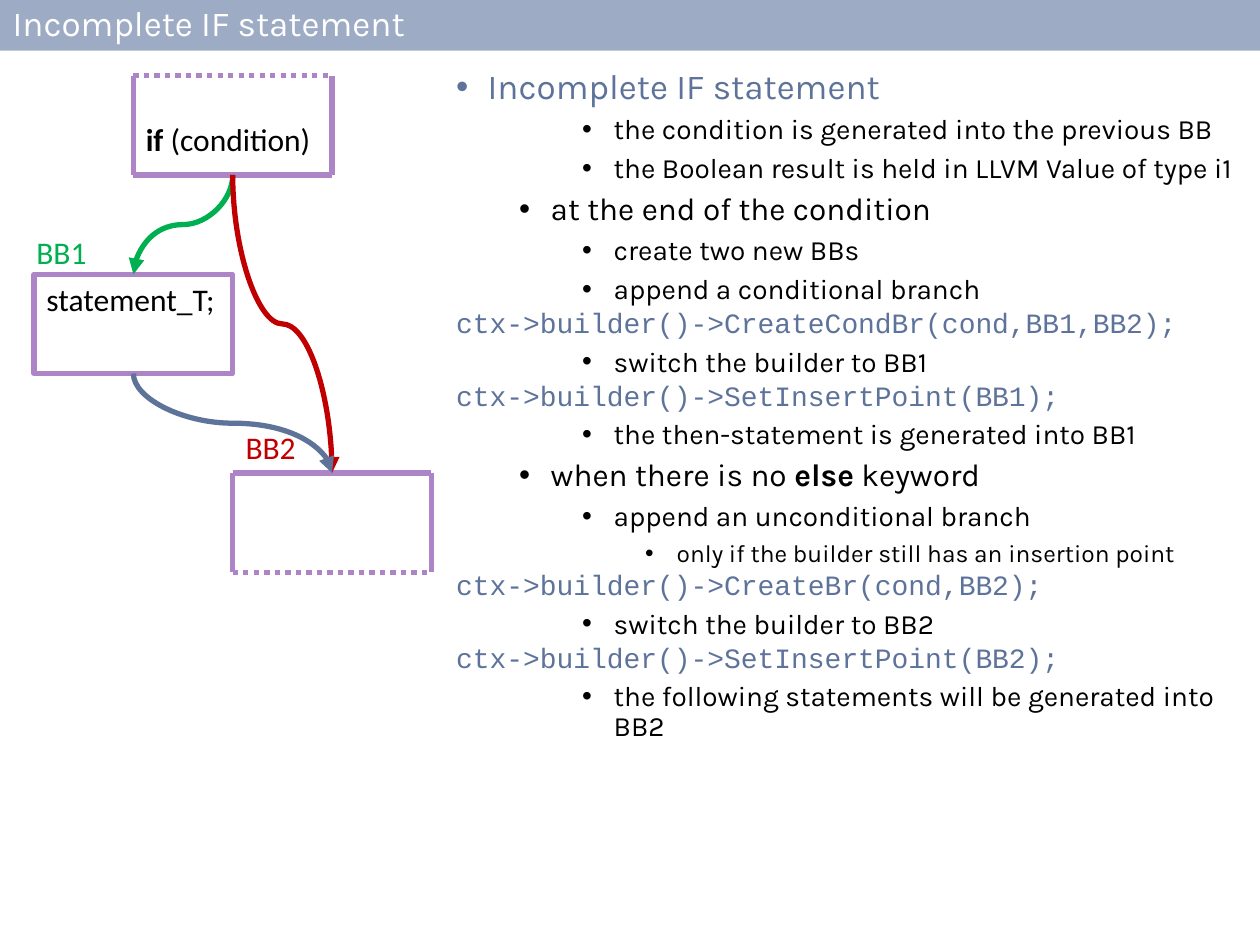
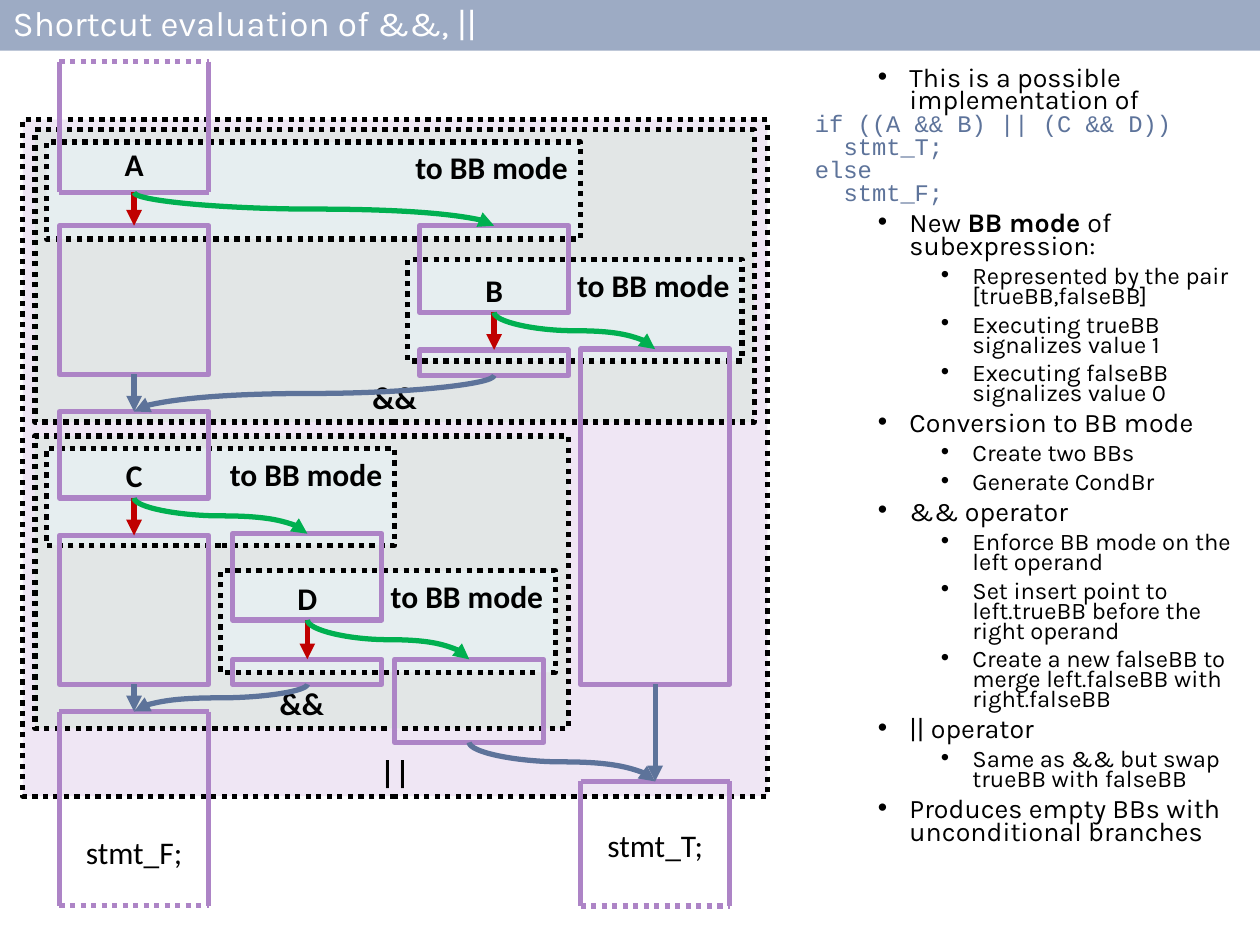
from dataclasses import dataclass

from lxml import etree
from pptx import Presentation
from pptx.dml.color import RGBColor
from pptx.enum.dml import MSO_LINE
from pptx.enum.shapes import MSO_CONNECTOR, MSO_SHAPE
from pptx.enum.text import MSO_ANCHOR, MSO_AUTO_SIZE, PP_ALIGN
from pptx.oxml.ns import qn
from pptx.util import Pt

STRAIGHT, CURVE = MSO_CONNECTOR.STRAIGHT, MSO_CONNECTOR.CURVE
RECTANGLE, DOTTED = MSO_SHAPE.RECTANGLE, MSO_LINE.ROUND_DOT
LEFT, CENTER, RIGHT = PP_ALIGN.LEFT, PP_ALIGN.CENTER, PP_ALIGN.RIGHT
TOP, MIDDLE, BOTTOM = MSO_ANCHOR.TOP, MSO_ANCHOR.MIDDLE, MSO_ANCHOR.BOTTOM
SIDE_TOP, SIDE_BOTTOM = 0, 2
CODE = 4


@dataclass(frozen=True)
class Theme:
    band: str = "9DABC4"
    blue: str = "5D739A"
    purple: str = "AD84C6"
    green: str = "00B050"
    red: str = "C00000"
    black: str = "000000"
    white: str = "FFFFFF"
    or_fill: str = "EFE6F4"
    and_fill: str = "E2E6E6"
    mode_fill: str = "E6EEF0"
    body_font: str = "Karla"
    code_font: str = "Courier New"
    diagram_font: str = "Calibri"
    title_size: float = 20
    diagram_size: float = 18
    diagram_line: float = 22
    level_sizes: tuple = (20, 18, 16, 14, 16)
    stroke: float = 3


THEME = Theme()

# Text: (level, text), with ** around bold words
IF_TITLE = "Incomplete IF statement"
IF_BODY = [
    (0, "Incomplete IF statement"),
    (2, "the condition is generated into the previous BB"),
    (2, "the Boolean result is held in LLVM Value of type i1"),
    (1, "at the end of the condition"),
    (2, "create two new BBs"),
    (2, "append a conditional branch"),
    (CODE, "ctx->builder()->CreateCondBr(cond,BB1,BB2);"),
    (2, "switch the builder to BB1"),
    (CODE, "ctx->builder()->SetInsertPoint(BB1);"),
    (2, "the then-statement is generated into BB1"),
    (1, "when there is no **else** keyword"),
    (2, "append an unconditional branch"),
    (3, "only if the builder still has an insertion point"),
    (CODE, "ctx->builder()->CreateBr(cond,BB2);"),
    (2, "switch the builder to BB2"),
    (CODE, "ctx->builder()->SetInsertPoint(BB2);"),
    (2, "the following statements will be generated into BB2"),
]
SHORTCUT_TITLE = "Shortcut evaluation of &&, ||"
SHORTCUT_BODY = [
    (1, "This is a possible implementation of"),
    (CODE, "if ((A && B) || (C && D))"),
    (CODE, "  stmt_T;"),
    (CODE, "else"),
    (CODE, "  stmt_F;"),
    (1, "New **BB mode **of subexpression:"),
    (2, "Represented by the pair [trueBB,falseBB]"),
    (2, "Executing trueBB signalizes value 1"),
    (2, "Executing falseBB signalizes value 0"),
    (1, "Conversion to BB mode"),
    (2, "Create two BBs"),
    (2, "Generate CondBr"),
    (1, "&& operator"),
    (2, "Enforce BB mode on the left operand"),
    (2, "Set insert point to left.trueBB before the right operand"),
    (2, "Create a new falseBB to merge left.falseBB with right.falseBB"),
    (1, "|| operator"),
    (2, "Same as && but swap trueBB with falseBB"),
    (1, "Produces empty BBs with unconditional branches"),
]

# Diagram of the IF statement: name -> (column, row, text, lines above, open side)
IF_GRID_LEFT, IF_GRID_TOP, IF_STEP = 19.5, 43.25, 56.75
IF_BLOCKS = {
    "condition": (1, 0, "**if** (condition)", 1, "top"),
    "BB1": (0, 2, "statement_T;", 0, None),
    "BB2": (2, 4, "", 0, "bottom"),
}
IF_LABELS = [("BB1", 13.7, 129.6, THEME.green), ("BB2", 133.2, 241.2, THEME.red)]
IF_LINKS = [
    ("condition", "BB1", THEME.green),
    ("condition", "BB2", THEME.red),
    ("BB1", "BB2", THEME.blue),
]

# Diagram of shortcut evaluation: (text, left, top, width, height, fill)
REGIONS = [
    ("||", 13, 68.4, 425.5, 386.6, THEME.or_fill),
    ("&&", 20, 74.2, 411, 167, THEME.and_fill),
    ("&&", 20, 249.2, 305, 167, THEME.and_fill),
    ("to BB mode", 233, 148.3, 191, 58, THEME.mode_fill),
    ("to BB mode", 26.6, 81.2, 305, 55.4, THEME.mode_fill),
    ("to BB mode", 26.6, 256.3, 199, 55.4, THEME.mode_fill),
    ("to BB mode", 126, 326.2, 191.5, 58, THEME.mode_fill),
]
# name -> (left, top, bottom, text, lines above, open side)
BLOCK_WIDTH = 85.25
COLUMN_A, COLUMN_D, COLUMN_D_TRUE, COLUMN_B, COLUMN_T = 34, 133, 225.5, 239.75, 331.75
BLOCKS = {
    "A": (COLUMN_A, 35.2, 110, "**A**", 2, "top"),
    "A false": (COLUMN_A, 129, 214, "", 0, None),
    "B": (COLUMN_B, 129, 178.5, "**B**", 1, None),
    "B false": (COLUMN_B, 200, 214.5, "", 0, None),
    "B true": (COLUMN_T, 199.5, 391, "", 0, None),
    "C": (COLUMN_A, 235.2, 284.6, "**C**", 1, None),
    "C false": (COLUMN_A, 306, 391, "", 0, None),
    "D": (COLUMN_D, 305, 354.3, "**D**", 1, None),
    "D false": (COLUMN_D, 376.8, 391, "", 0, None),
    "D true": (COLUMN_D_TRUE, 376.8, 424.2, "", 0, None),
    "stmt_F": (COLUMN_A, 406.6, 517.5, "stmt_F;", 3, "bottom"),
    "stmt_T": (COLUMN_T, 446.5, 517.8, "stmt_T;", 1, "bottom"),
}
LINKS = [
    ("A", "A false", THEME.red), ("A", "B", THEME.green),
    ("B", "B false", THEME.red), ("B", "B true", THEME.green),
    ("C", "C false", THEME.red), ("C", "D", THEME.green),
    ("D", "D false", THEME.red), ("D", "D true", THEME.green),
    ("A false", "C", THEME.blue), ("B false", "C", THEME.blue),
    ("C false", "stmt_F", THEME.blue), ("D false", "stmt_F", THEME.blue),
    ("B true", "stmt_T", THEME.blue), ("D true", "stmt_T", THEME.blue),
]


# Text helpers
def write(paragraph, text, size, font, color):
    for index, part in enumerate(text.split("**")):
        if part:
            run = paragraph.add_run()
            run.text = part
            run.font.size, run.font.name = Pt(size), font
            run.font.bold = index % 2 == 1
            run.font.color.rgb = RGBColor.from_string(color)


def write_label(shape, text, align=LEFT, anchor=TOP, lines_above=0,
                color=THEME.black, wrap=True):
    frame = shape.text_frame
    frame.word_wrap, frame.vertical_anchor = wrap, anchor
    frame.margin_top = Pt(3.6 + lines_above * THEME.diagram_line)
    paragraph = frame.paragraphs[0]
    paragraph.alignment = align
    write(paragraph, text, THEME.diagram_size, THEME.diagram_font, color)


def place(shape, left, top, width, height):
    shape.left, shape.top = Pt(left), Pt(top)
    shape.width, shape.height = Pt(width), Pt(height)


# Slide with title band and outline
def add_slide(presentation, title_text, body, body_left, body_width,
              scale=1.0, tighten=0.0):
    slide = presentation.slides.add_slide(presentation.slide_layouts[1])
    title, outline = slide.placeholders
    place(title, 0, 0, 720, 29)
    title.fill.solid()
    title.fill.fore_color.rgb = RGBColor.from_string(THEME.band)
    title.text_frame.vertical_anchor = MIDDLE
    title.text_frame.auto_size = MSO_AUTO_SIZE.NONE
    paragraph = title.text_frame.paragraphs[0]
    paragraph.alignment, paragraph.line_spacing = LEFT, 0.9
    write(paragraph, title_text, THEME.title_size, THEME.body_font, THEME.white)

    place(outline, body_left, 36, body_width, 468)
    frame = outline.text_frame
    frame.auto_size = MSO_AUTO_SIZE.NONE
    for index, (level, text) in enumerate(body):
        paragraph = frame.add_paragraph() if index else frame.paragraphs[0]
        add_outline_item(paragraph, level, text, scale, tighten)
    return slide


def add_outline_item(paragraph, level, text, scale, tighten):
    is_code = level == CODE
    size = THEME.level_sizes[level] * scale
    paragraph.level = level
    paragraph.line_spacing = (1.0 if is_code else 0.9) - tighten
    paragraph.space_before = Pt(0 if is_code else 5 if level else 10)
    properties = paragraph._p.get_or_add_pPr()
    if is_code:
        code = text.lstrip()
        margin, hanging = (len(text) - len(code)) * 0.6 * size, 0
        text = code
        etree.SubElement(properties, qn("a:buNone"))
    else:
        margin, hanging = 18 + 36 * level, -18
        etree.SubElement(properties, qn("a:buChar")).set("char", "•")
    properties.set("marL", str(Pt(margin)))
    properties.set("indent", str(Pt(hanging)))
    font = THEME.code_font if is_code else THEME.body_font
    color = THEME.blue if level in (0, CODE) else THEME.black
    write(paragraph, text, size, font, color)


# Diagram parts
def style_line(line, color, dotted=False):
    line.color.rgb = RGBColor.from_string(color)
    line.width = Pt(THEME.stroke)
    if dotted:
        line.dash_style = DOTTED


def add_line(shapes, kind, ends, color, dotted=False):
    connector = shapes.add_connector(kind, *ends)
    style_line(connector.line, color, dotted)
    etree.SubElement(connector._element.spPr, qn("a:effectLst"))
    return connector


def add_rectangle(slide, box, color, fill=None):
    shape = slide.shapes.add_shape(RECTANGLE, *map(Pt, box))
    shape.shadow.inherit = False
    if fill:
        shape.fill.solid()
        shape.fill.fore_color.rgb = RGBColor.from_string(fill)
    else:
        shape.fill.background()
    style_line(shape.line, color, dotted=bool(fill))
    return shape


def add_block(slide, box, text, lines_above, open_side, align):
    if open_side is None:
        block = add_rectangle(slide, box, THEME.purple)
    else:
        group = slide.shapes.add_group_shape()
        block = group.shapes.add_textbox(*map(Pt, box)) if text else group
        left, top, width, height = box
        right, bottom = left + width, top + height
        sides = {
            "left": (left, top, left, bottom),
            "bottom": (left, bottom, right, bottom),
            "right": (right, top, right, bottom),
            "top": (left, top, right, top),
        }
        for side, ends in sides.items():
            add_line(group.shapes, STRAIGHT, map(Pt, ends), THEME.purple,
                     dotted=side == open_side)
    if text:
        write_label(block, text, align, TOP, lines_above)
    return block


def add_link(slide, source, target, color):
    """Arrow from the bottom of source to the top of target."""
    start_x, start_y = source.left + source.width // 2, source.top + source.height
    end_x, end_y = target.left + target.width // 2, target.top
    if start_x == end_x:
        arrow = add_line(slide.shapes, STRAIGHT, (start_x, start_y, end_x, end_y), color)
        arrow.begin_connect(source, SIDE_BOTTOM)
        arrow.end_connect(target, SIDE_TOP)
    else:
        # A curve that leaves downwards is a sideways curve turned about its centre
        length, spread = end_y - start_y, abs(end_x - start_x)
        left = (start_x + end_x - length) // 2
        top = (start_y + end_y - spread) // 2
        arrow = add_line(slide.shapes, CURVE, (left, top, left + length, top + spread), color)
        transform = arrow._element.spPr.find(qn("a:xfrm"))
        if end_x > start_x:
            transform.set("rot", "16200000")
            transform.set("flipH", "1")
        else:
            transform.set("rot", "5400000")
    outline = arrow._element.spPr.find(qn("a:ln"))
    etree.SubElement(outline, qn("a:tailEnd")).set("type", "triangle")


def add_links(slide, blocks, links):
    for source, target, color in links:
        add_link(slide, blocks[source], blocks[target], color)


# Slides
def build_if_slide(presentation):
    slide = add_slide(presentation, IF_TITLE, IF_BODY, 253.5, 461)
    blocks = {}
    for name, (column, row, text, lines_above, open_side) in IF_BLOCKS.items():
        box = (IF_GRID_LEFT + column * IF_STEP, IF_GRID_TOP + row * IF_STEP,
               2 * IF_STEP, IF_STEP)
        blocks[name] = add_block(slide, box, text, lines_above, open_side, LEFT)
    add_links(slide, blocks, IF_LINKS)
    for text, left, top, color in IF_LABELS:
        label = slide.shapes.add_textbox(Pt(left), Pt(top), Pt(43), Pt(29))
        write_label(label, text, color=color, wrap=False)


def build_shortcut_slide(presentation):
    slide = add_slide(presentation, SHORTCUT_TITLE, SHORTCUT_BODY, 458.5, 255.5,
                      scale=0.85, tighten=0.2)
    for text, *box, fill in REGIONS:
        region = add_rectangle(slide, box, THEME.black, fill)
        is_mode = fill == THEME.mode_fill
        write_label(region, f"**{text}**", RIGHT if is_mode else CENTER,
                    TOP if is_mode else BOTTOM)
    blocks = {}
    for name, (left, top, bottom, text, lines_above, open_side) in BLOCKS.items():
        box = (left, top, BLOCK_WIDTH, bottom - top)
        blocks[name] = add_block(slide, box, text, lines_above, open_side, CENTER)
    add_links(slide, blocks, LINKS)


def main():
    presentation = Presentation()
    presentation.slide_width, presentation.slide_height = Pt(720), Pt(540)
    build_if_slide(presentation)
    build_shortcut_slide(presentation)
    presentation.save("out.pptx")


if __name__ == "__main__":
    main()
